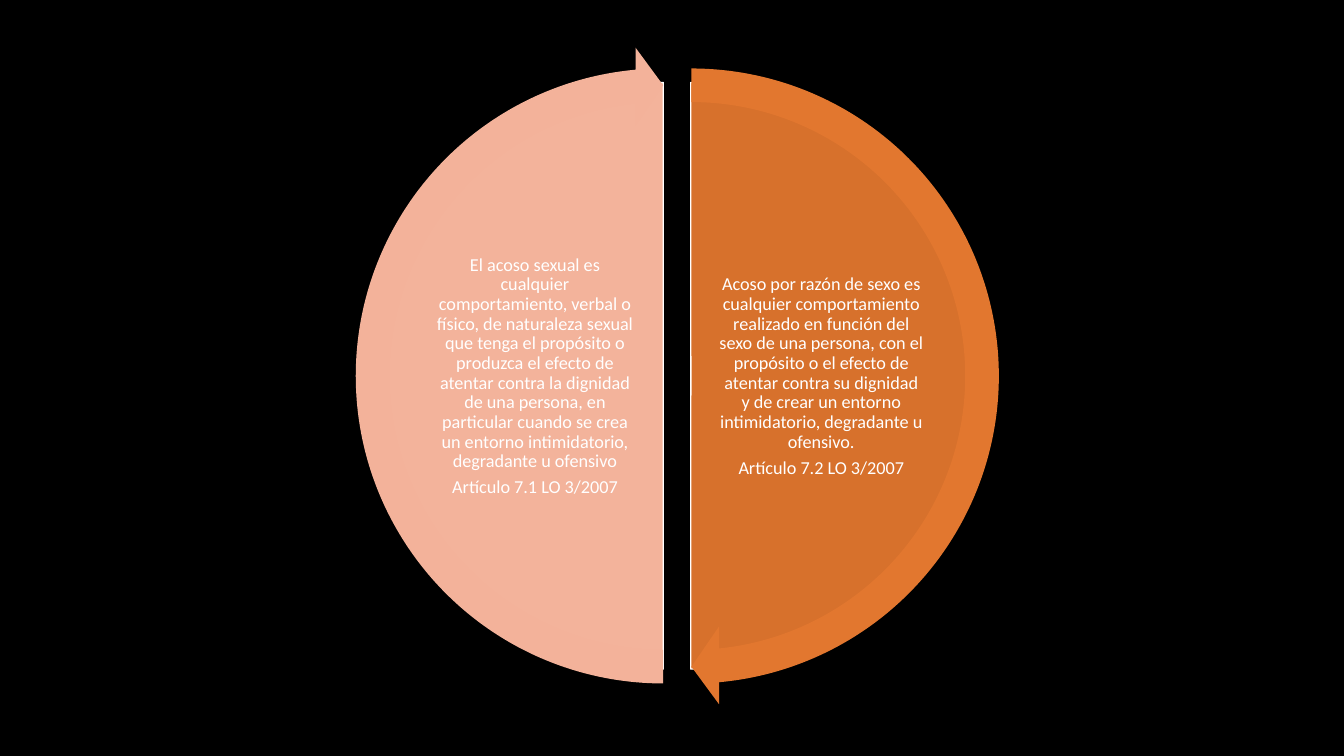
from dataclasses import dataclass

from pptx import Presentation
from pptx.dml.color import RGBColor
from pptx.enum.shapes import MSO_SHAPE
from pptx.enum.text import MSO_ANCHOR, PP_ALIGN
from pptx.shapes.autoshape import Shape
from pptx.slide import Slide
from pptx.util import Cm, Pt


@dataclass(frozen=True)
class Theme:
    background: RGBColor = RGBColor(0x00, 0x00, 0x00)
    white: RGBColor = RGBColor(0xFF, 0xFF, 0xFF)
    orange_pie: RGBColor = RGBColor(0xD7, 0x71, 0x2C)
    orange_arrow: RGBColor = RGBColor(0xE2, 0x77, 0x2F)
    pink_pie: RGBColor = RGBColor(0xF3, 0xB3, 0x9B)
    pink_arrow: RGBColor = RGBColor(0xF3, 0xB2, 0x9A)
    font: str = "Calibri"
    text_size: Pt = Pt(13)
    space_after: Pt = Pt(4.5)
    outline: Pt = Pt(1)


@dataclass(frozen=True)
class Half:
    """One half of the cycle; lengths in cm, angles in degrees."""
    pie_left: float
    pie_width: float
    text_left: float
    text_width: float
    arrow_left: float
    start: float
    end: float
    pie_color: RGBColor
    arrow_color: RGBColor
    definition: str
    article: str


THEME = Theme()
PIE_TOP, PIE_HEIGHT = 2.08, 14.78
TEXT_TOP, TEXT_HEIGHT = 5.97, 7.04
ARROW_TOP, ARROW_SIZE = 1.17, 16.61
ARROW_BAND, ARROW_HEAD = 0.051, 0.059
HEAD_ANGLE = 5.46
UNITS_PER_DEGREE = 0.6  # one degree is 60000 units, adjustments count 100000

HALVES = [
    Half(10.08, 14.66, 18.08, 5.23, 9.12, 270, 90,
         THEME.orange_pie, THEME.orange_arrow,
         "Acoso por razón de sexo es cualquier comportamiento realizado en "
         "función del sexo de una persona, con el propósito o el efecto de "
         "atentar contra su dignidad y de crear un entorno intimidatorio, "
         "degradante u ofensivo.",
         "Artículo 7.2 LO 3/2007"),
    Half(9.5, 14.43, 10.9, 5.16, 8.41, 90, 270,
         THEME.pink_pie, THEME.pink_arrow,
         "El acoso sexual es cualquier comportamiento, verbal o físico, de "
         "naturaleza sexual que tenga el propósito o produzca el efecto de "
         "atentar contra la dignidad de una persona, en particular cuando se "
         "crea un entorno intimidatorio, degradante u ofensivo",
         "Artículo 7.1 LO 3/2007"),
]


def angle(degrees: float) -> float:
    return degrees * UNITS_PER_DEGREE


def add_filled(slide: Slide, kind: MSO_SHAPE, left: float, top: float,
               width: float, height: float, color: RGBColor,
               adjustments: list[float]) -> Shape:
    sp = slide.shapes.add_shape(kind, Cm(left), Cm(top), Cm(width), Cm(height))
    sp.shadow.inherit = False
    sp.fill.solid()
    sp.fill.fore_color.rgb = color
    for i, value in enumerate(adjustments):
        sp.adjustments[i] = value
    return sp


def add_pie(slide: Slide, half: Half) -> None:
    sp = add_filled(slide, MSO_SHAPE.PIE, half.pie_left, PIE_TOP,
                    half.pie_width, PIE_HEIGHT, half.pie_color,
                    [angle(half.start), angle(half.end)])
    sp.line.color.rgb = THEME.white
    sp.line.width = THEME.outline


def add_text(slide: Slide, half: Half) -> None:
    box = slide.shapes.add_textbox(Cm(half.text_left), Cm(TEXT_TOP),
                                   Cm(half.text_width), Cm(TEXT_HEIGHT))
    tf = box.text_frame
    tf.word_wrap = True
    tf.vertical_anchor = MSO_ANCHOR.MIDDLE
    tf.margin_left = tf.margin_right = Cm(0.05)
    tf.margin_top = tf.margin_bottom = Cm(0.05)
    tf.text = f"{half.definition}\n{half.article}"
    for p in tf.paragraphs:
        p.alignment = PP_ALIGN.CENTER
        p.line_spacing = 0.9
        p.space_after = THEME.space_after
        p.font.name = THEME.font
        p.font.size = THEME.text_size
        p.font.color.rgb = THEME.white


def add_arrow(slide: Slide, half: Half) -> None:
    """Draw the ring along the half; its head ends at the end angle."""
    sp = add_filled(slide, MSO_SHAPE.CIRCULAR_ARROW, half.arrow_left, ARROW_TOP,
                    ARROW_SIZE, ARROW_SIZE, half.arrow_color,
                    [ARROW_BAND, angle(HEAD_ANGLE),
                     angle(half.end - HEAD_ANGLE), angle(half.start),
                     ARROW_HEAD])
    sp.line.fill.background()


def main() -> None:
    prs = Presentation()
    prs.slide_width, prs.slide_height = Cm(33.87), Cm(19.05)
    slide = prs.slides.add_slide(prs.slide_layouts[6])
    slide.background.fill.solid()
    slide.background.fill.fore_color.rgb = THEME.background
    for half in HALVES:
        add_pie(slide, half)
        add_text(slide, half)
    for half in HALVES:
        add_arrow(slide, half)
    prs.save("out.pptx")


if __name__ == "__main__":
    main()
